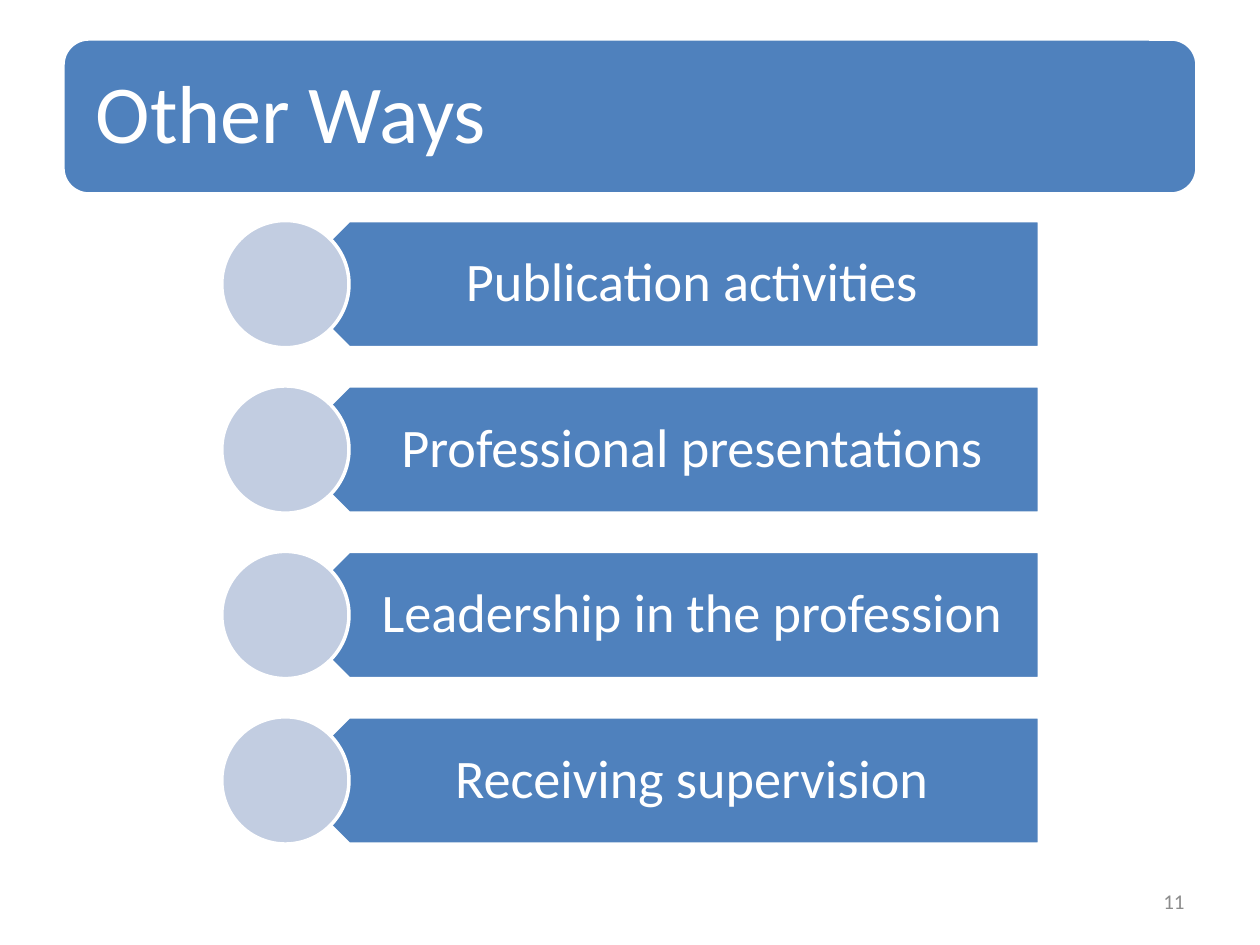
from pptx import Presentation
from pptx.dml.color import RGBColor
from pptx.enum.shapes import MSO_SHAPE
from pptx.enum.text import MSO_ANCHOR, MSO_AUTO_SIZE, PP_ALIGN
from pptx.util import Inches, Pt

TITLE = "Other Ways"
WAYS = [
    "Publication activities",
    "Professional presentations",
    "Leadership in the profession",
    "Receiving supervision",
]
PAGE_NUMBER = "11"

BLUE = RGBColor(0x4F, 0x81, 0xBD)
PALE_BLUE = RGBColor(0xC2, 0xCD, 0xE1)
WHITE = RGBColor(0xFF, 0xFF, 0xFF)
GRAY = RGBColor(0x8C, 0x8C, 0x8C)
FONT = "Calibri"

LEFT, CENTER, RIGHT = PP_ALIGN.LEFT, PP_ALIGN.CENTER, PP_ALIGN.RIGHT
ROUNDED, ARROW, CIRCLE = (
    MSO_SHAPE.ROUNDED_RECTANGLE, MSO_SHAPE.PENTAGON, MSO_SHAPE.OVAL)
TITLE_ONLY_LAYOUT = 5

SLIDE_WIDTH, SLIDE_HEIGHT = 10, 7.5
MARGIN = SLIDE_WIDTH / 20
BAND_TOP, BAND_HEIGHT = 0.31, 1.23
BAND_PADDING = 0.06
FIRST_ROW_TOP, ROW_HEIGHT, ROW_PITCH = 1.75, 1.01, 1.313
CIRCLE_LEFT, ARROW_RIGHT = 1.76, 8.25
ARROW_LEFT = CIRCLE_LEFT + ROW_HEIGHT / 2
LABEL_LEFT = ARROW_LEFT + ROW_HEIGHT / 4


def add_filled_shape(slide, kind, left, top, width, height, color):
    shape = slide.shapes.add_shape(
        kind, Inches(left), Inches(top), Inches(width), Inches(height))
    shape.shadow.inherit = False
    shape.fill.solid()
    shape.fill.fore_color.rgb = color
    shape.line.color.rgb = WHITE
    shape.line.width = Pt(2)
    return shape


def add_text_box(slide, left, top, width, height):
    return slide.shapes.add_textbox(
        Inches(left), Inches(top), Inches(width), Inches(height))


def write_text(shape, text, size, color=WHITE, align=LEFT, line_spacing=0.9,
               insets=(0.1, 0.05, 0.1, 0.05)):
    """Fill a shape with one paragraph; insets are left, top, right, bottom."""
    frame = shape.text_frame
    frame.text = text
    frame.word_wrap = True
    frame.auto_size = MSO_AUTO_SIZE.NONE
    frame.vertical_anchor = MSO_ANCHOR.MIDDLE
    (frame.margin_left, frame.margin_top,
     frame.margin_right, frame.margin_bottom) = map(Inches, insets)
    paragraph = frame.paragraphs[0]
    paragraph.alignment = align
    paragraph.line_spacing = line_spacing
    font = paragraph.runs[0].font
    font.name, font.size = FONT, Pt(size)
    font.color.rgb = color


def add_title(slide):
    width = SLIDE_WIDTH - 2 * MARGIN
    band = add_filled_shape(
        slide, ROUNDED, MARGIN, BAND_TOP, width, BAND_HEIGHT, BLUE)
    title = slide.shapes.title
    title.left, title.top = Inches(MARGIN + BAND_PADDING), Inches(BAND_TOP + BAND_PADDING)
    title.width = Inches(width - 2 * BAND_PADDING)
    title.height = Inches(BAND_HEIGHT - 2 * BAND_PADDING)
    write_text(title, TITLE, 47, insets=(0.2, 0.2, 0.2, 0.2))
    band.element.addnext(title.element)


def add_way(slide, row, text):
    top = FIRST_ROW_TOP + row * ROW_PITCH
    arrow = add_filled_shape(slide, ARROW, ARROW_LEFT, top,
                             ARROW_RIGHT - ARROW_LEFT, ROW_HEIGHT, BLUE)
    arrow.rotation = 180
    label = add_text_box(
        slide, LABEL_LEFT, top, ARROW_RIGHT - LABEL_LEFT, ROW_HEIGHT)
    write_text(label, text, 31, align=CENTER, insets=(0.45, 0.13, 0.24, 0.13))
    add_filled_shape(
        slide, CIRCLE, CIRCLE_LEFT, top, ROW_HEIGHT, ROW_HEIGHT, PALE_BLUE)


def main():
    presentation = Presentation()
    presentation.slide_width = Inches(SLIDE_WIDTH)
    presentation.slide_height = Inches(SLIDE_HEIGHT)
    slide = presentation.slides.add_slide(
        presentation.slide_layouts[TITLE_ONLY_LAYOUT])
    add_title(slide)
    for row, text in enumerate(WAYS):
        add_way(slide, row, text)
    page_number = add_text_box(slide, 7.17, 6.95, 2.33, 0.4)
    write_text(page_number, PAGE_NUMBER, 12, color=GRAY, align=RIGHT, line_spacing=1.0)
    presentation.save("out.pptx")


if __name__ == "__main__":
    main()
